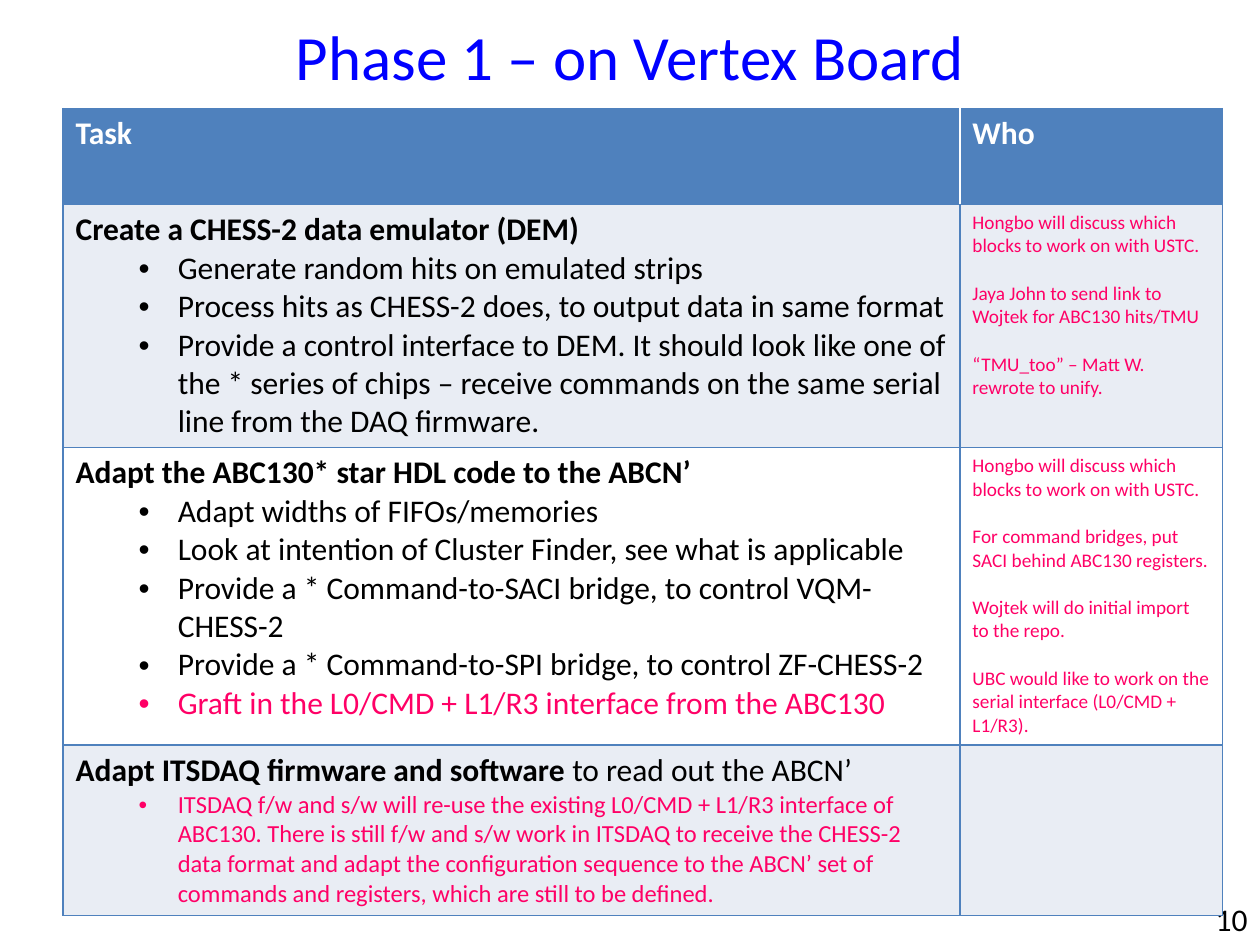
"""Build the task table slide for phase 1."""
from lxml import etree
from pptx import Presentation
from pptx import util as u
from pptx.dml.color import RGBColor
from pptx.enum import text
from pptx.oxml import ns

TITLE_BLUE = RGBColor(0x00, 0x00, 0xFF)
TABLE_BLUE = RGBColor(0x4F, 0x81, 0xBD)
BAND = RGBColor(0xE9, 0xED, 0xF4)
PINK = RGBColor(0xFF, 0x00, 0x66)
WHITE = RGBColor(0xFF, 0xFF, 0xFF)
BLACK = RGBColor(0x00, 0x00, 0x00)

COLUMN_WIDTHS = (18.08, 5.29)
ROW_HEIGHTS = (1.93, 4.9, 6, 3.44)
ROW_FILLS = (TABLE_BLUE, BAND, WHITE, BAND)

DISCUSS = "Hongbo will discuss which blocks to work on with USTC."
TASKS = (
    (
        ("Create a CHESS-2 data emulator (DEM)", ""),
        (
            ("Generate random hits on emulated strips", 18, BLACK),
            ("Process hits as CHESS-2 does, to output data in same format", 18, BLACK),
            ("Provide a control interface to DEM. It should look like one of the * series "
             "of chips – receive commands on the same serial line from the DAQ firmware.",
             18, BLACK),
        ),
        (
            DISCUSS,
            "Jaya John to send link to Wojtek for ABC130 hits/TMU",
            "“TMU_too” – Matt W. rewrote to unify.",
        ),
    ),
    (
        ("Adapt the ABC130* star HDL code to the ABCN’", ""),
        (
            ("Adapt widths of FIFOs/memories", 18, BLACK),
            ("Look at intention of Cluster Finder, see what is applicable", 18, BLACK),
            ("Provide a * Command-to-SACI bridge, to control VQM-CHESS-2", 18, BLACK),
            ("Provide a * Command-to-SPI bridge, to control ZF-CHESS-2", 18, BLACK),
            ("Graft in the L0/CMD + L1/R3 interface from the ABC130", 18, PINK),
        ),
        (
            DISCUSS,
            "For command bridges, put SACI behind ABC130 registers.",
            "Wojtek will do initial import to the repo.",
            "UBC would like to work on the serial interface (L0/CMD + L1/R3).",
        ),
    ),
    (
        ("Adapt ITSDAQ firmware and software ", "to read out the ABCN’"),
        (
            ("ITSDAQ f/w and s/w will re-use the existing L0/CMD + L1/R3 interface of ABC130. "
             "There is still f/w and s/w work in ITSDAQ to receive the CHESS-2 data format and "
             "adapt the configuration sequence to the ABCN’ set of commands and registers, "
             "which are still to be defined.", 14, PINK),
        ),
        (),
    ),
)


class SlideBuilder:
    """Hold the style and the current slide."""

    font_name = "Calibri"

    def __init__(self, presentation):
        self.slide = presentation.slides.add_slide(presentation.slide_layouts[5])

    def style(self, paragraph, size, color, bold=False):
        """Format a whole paragraph."""
        font = paragraph.font
        font.name, font.size, font.bold = self.font_name, u.Pt(size), bold
        font.color.rgb = color

    def title(self, wording, left, top, width, height):
        """Place and fill the title placeholder."""
        shape = self.slide.shapes.title
        shape.left, shape.top = u.Cm(left), u.Cm(top)
        shape.width, shape.height = u.Cm(width), u.Cm(height)
        self.fill_box(shape, wording, 36, TITLE_BLUE, text.PP_ALIGN.CENTER)

    def label(self, wording, left, top, width, height):
        """Add a right-aligned text box."""
        shape = self.slide.shapes.add_textbox(*map(u.Cm, (left, top, width, height)))
        self.fill_box(shape, wording, 18, BLACK, text.PP_ALIGN.RIGHT)

    def fill_box(self, shape, wording, size, color, alignment):
        """Write one line in the middle of a shape."""
        frame = shape.text_frame
        frame.text = wording
        frame.word_wrap = True
        frame.vertical_anchor = text.MSO_ANCHOR.MIDDLE
        paragraph = frame.paragraphs[0]
        paragraph.alignment = alignment
        self.style(paragraph, size, color)

    def table(self, left, top):
        """Add the empty grid with fills and borders."""
        table = self.slide.shapes.add_table(
            len(ROW_HEIGHTS), len(COLUMN_WIDTHS), u.Cm(left), u.Cm(top),
            u.Cm(sum(COLUMN_WIDTHS)), u.Cm(sum(ROW_HEIGHTS))).table
        for column, width in zip(table.columns, COLUMN_WIDTHS):
            column.width = u.Cm(width)
        for row, height, fill in zip(table.rows, ROW_HEIGHTS, ROW_FILLS):
            row.height = u.Cm(height)
            for cell in row.cells:
                self.borders(cell)
                cell.fill.solid()
                cell.fill.fore_color.rgb = fill
        self.borders(table.cell(0, 0), white_side="R")
        self.borders(table.cell(0, 1), white_side="L")
        return table

    def borders(self, cell, white_side=None):
        """Draw the four borders of a cell."""
        properties = cell._tc.get_or_add_tcPr()
        for position, side in enumerate("LRTB"):
            tag = ns.qn(f"a:ln{side}")
            for old in properties.findall(tag):
                properties.remove(old)
            line = etree.Element(tag, w=str(u.Pt(1)))
            properties.insert(position, line)
            solid = etree.SubElement(line, ns.qn("a:solidFill"))
            color = WHITE if side == white_side else TABLE_BLUE
            etree.SubElement(solid, ns.qn("a:srgbClr"), val=str(color))

    def heading(self, cell, wording, color, plain=""):
        """Write a bold first line, with an optional plain ending."""
        paragraph = cell.text_frame.paragraphs[0]
        paragraph.add_run().text = wording
        self.style(paragraph, 18, color, bold=True)
        if plain:
            run = paragraph.add_run()
            run.text = plain
            run.font.bold = False

    def bullet(self, cell, wording, size, color):
        """Add an indented bullet to a cell."""
        paragraph = cell.text_frame.add_paragraph()
        paragraph.text = wording
        paragraph.level = 1
        properties = paragraph._p.get_or_add_pPr()
        properties.set("marL", str(u.Cm(2.06)))
        properties.set("indent", str(-u.Cm(0.79)))
        etree.SubElement(properties, ns.qn("a:buFont"), typeface="Arial")
        etree.SubElement(properties, ns.qn("a:buChar"), char="•")
        self.style(paragraph, size, color)

    def remarks(self, cell, wordings):
        """Write small remarks, one line apart."""
        for index, wording in enumerate(wordings):
            frame = cell.text_frame
            paragraph = frame.add_paragraph() if index else frame.paragraphs[0]
            paragraph.text = wording
            if index:
                paragraph.space_before = u.Pt(13.4)
            self.style(paragraph, 11, PINK)


def main():
    """Build and save the slide."""
    presentation = Presentation()
    presentation.slide_width, presentation.slide_height = u.Cm(25.4), u.Cm(19.05)
    builder = SlideBuilder(presentation)
    builder.title("Phase 1 – on Vertex Board", 1.27, 0.33, 22.86, 1.57)
    builder.label("10", 23.5, 18.01, 1.9, 1.02)
    table = builder.table(1.27, 2.19)
    for column, wording in enumerate(("Task", "Who")):
        builder.heading(table.cell(0, column), wording, WHITE)
    for row, ((bold, plain), bullets, remarks) in enumerate(TASKS, start=1):
        builder.heading(table.cell(row, 0), bold, BLACK, plain)
        for bullet in bullets:
            builder.bullet(table.cell(row, 0), *bullet)
        builder.remarks(table.cell(row, 1), remarks)
    presentation.save("out.pptx")


if __name__ == "__main__":
    main()
